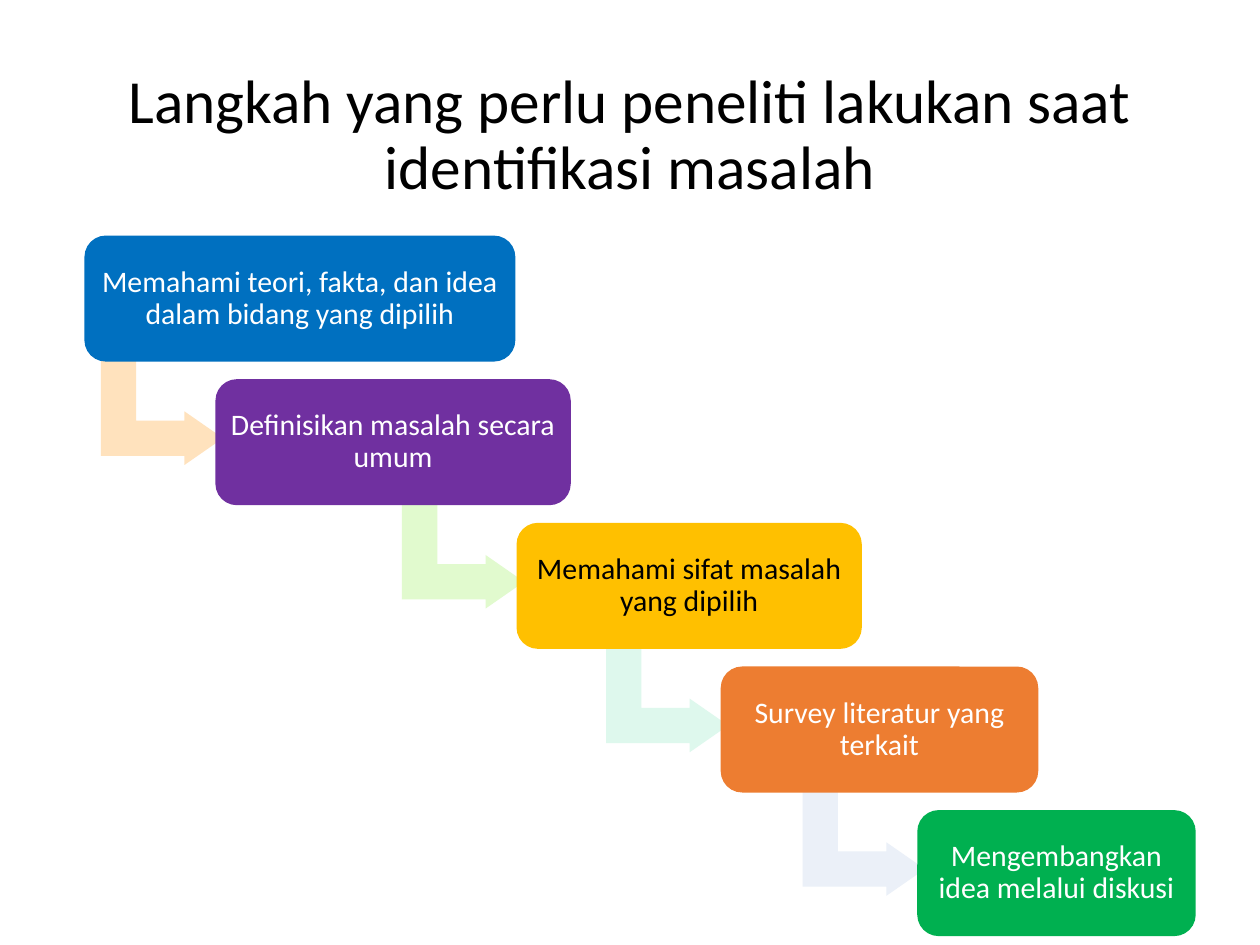
"""Build a slide with five research steps descending as a staircase."""
from dataclasses import dataclass

from pptx import Presentation
from pptx.dml.color import RGBColor
from pptx.enum.shapes import MSO_SHAPE
from pptx.enum.text import MSO_ANCHOR, MSO_AUTO_SIZE, PP_ALIGN
from pptx.util import Inches, Pt


@dataclass(frozen=True)
class Theme:
    font: str = "Calibri"
    title_size: int = 35
    step_size: int = 17
    dark: str = "000000"
    light: str = "FFFFFF"
    line_spacing: float = 0.9


THEME = Theme()
TITLE = "Langkah yang perlu peneliti lakukan saat identifikasi masalah"
STEPS = [
    {"text": "Memahami teori, fakta, dan idea dalam bidang yang dipilih",
     "left": 0.67, "width": 3.42, "fill": "0070C0", "color": THEME.light, "arrow": "FFE2BD"},
    {"text": "Definisikan masalah secara umum",
     "left": 1.71, "width": 2.82, "fill": "7030A0", "color": THEME.light, "arrow": "E1FACE"},
    {"text": "Memahami sifat masalah yang dipilih",
     "left": 4.1, "width": 2.74, "fill": "FFC000", "color": THEME.dark, "arrow": "DEF8ED"},
    {"text": "Survey literatur yang terkait",
     "left": 5.72, "width": 2.52, "fill": "ED7D31", "color": THEME.light, "arrow": "EBF0F8"},
    {"text": "Mengembangkan idea melalui diskusi",
     "left": 7.28, "width": 2.21, "fill": "00B050", "color": THEME.light},
]
FIRST_ROW, ROW_STEP, BOX_HEIGHT = 1.87, 1.14, 1
ARROW_WIDTH, ARROW_HEIGHT, ARROW_DROP = 0.85, 0.97, 0.91


def write(s, text, size, color, inset):
    tf = s.text_frame
    tf.word_wrap = True
    tf.auto_size = MSO_AUTO_SIZE.NONE
    tf.vertical_anchor = MSO_ANCHOR.MIDDLE
    tf.margin_left = tf.margin_right = Inches(inset)
    tf.margin_top = tf.margin_bottom = Inches(min(inset, 0.07))
    p = tf.paragraphs[0]
    p.alignment = PP_ALIGN.CENTER
    p.line_spacing = THEME.line_spacing
    r = p.add_run()
    r.text = text
    r.font.name = THEME.font
    r.font.size = Pt(size)
    r.font.color.rgb = RGBColor.from_string(color)


def add_shape(slide, kind, box, fill, adjustments):
    s = slide.shapes.add_shape(kind, *map(Inches, box))
    s.shadow.inherit = False
    s.fill.solid()
    s.fill.fore_color.rgb = RGBColor.from_string(fill)
    s.line.fill.background()
    for i, value in enumerate(adjustments):
        s.adjustments[i] = value
    return s


def main():
    prs = Presentation()
    prs.slide_width, prs.slide_height = Inches(10), Inches(7.5)
    slide = prs.slides.add_slide(prs.slide_layouts[5])

    title = slide.shapes.title
    title.left, title.top, title.width, title.height = map(Inches, (0.46, 0.67, 9.08, 0.83))
    write(title, TITLE, THEME.title_size, THEME.dark, 0.1)

    for i, step in enumerate(STEPS):
        top = FIRST_ROW + i * ROW_STEP
        if "arrow" in step:
            box = (STEPS[i + 1]["left"] - ARROW_WIDTH, top + ARROW_DROP,
                   ARROW_WIDTH, ARROW_HEIGHT)
            arrow = add_shape(slide, MSO_SHAPE.BENT_UP_ARROW, box, step["arrow"],
                              (0.33, 0.25, 0.36))
            arrow.rotation = 90
        box = (step["left"], top, step["width"], BOX_HEIGHT)
        s = add_shape(slide, MSO_SHAPE.ROUNDED_RECTANGLE, box, step["fill"], (0.17,))
        write(s, step["text"], THEME.step_size, step["color"], 0.07)

    prs.save("out.pptx")


if __name__ == "__main__":
    main()
